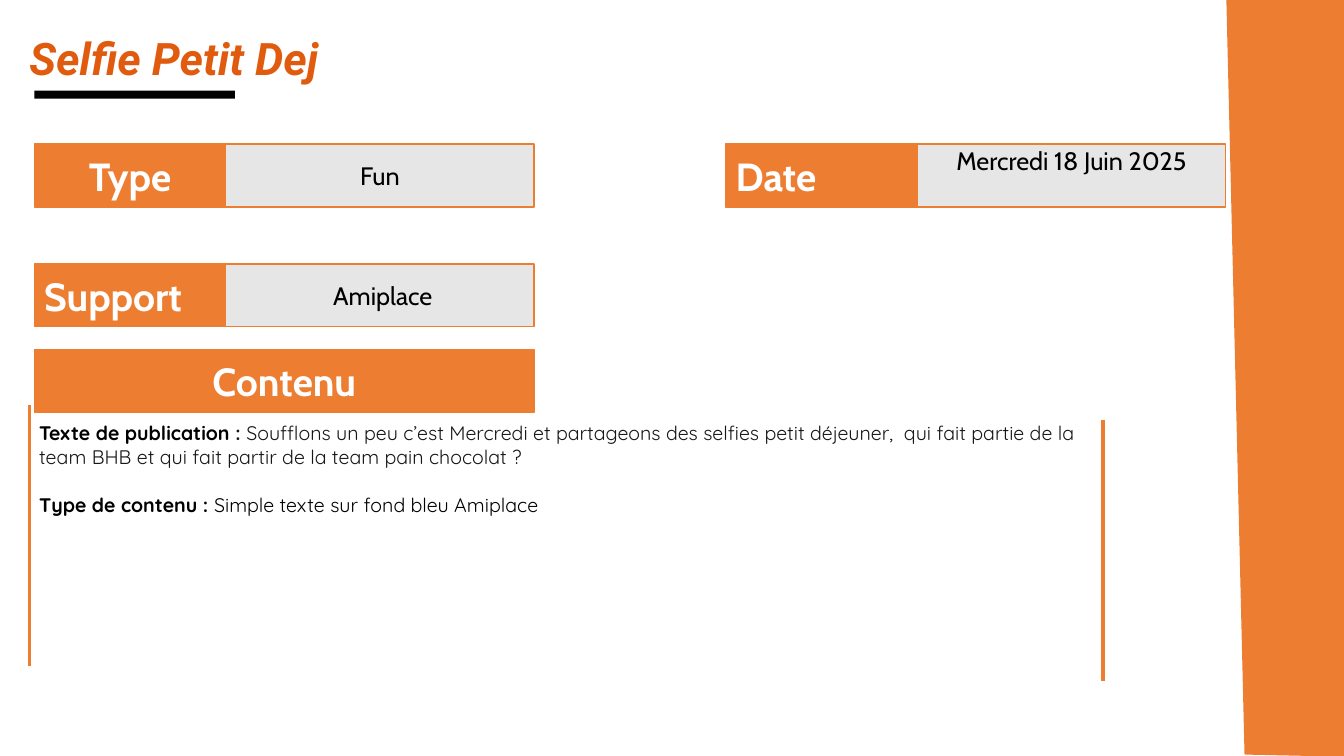
import pptx
import pptx.dml.color
import pptx.enum.shapes
import pptx.enum.text
import pptx.oxml.ns
import pptx.util
from lxml import etree

RGBColor = pptx.dml.color.RGBColor
ORANGE = RGBColor(0xED, 0x7D, 0x31)
TITLE_ORANGE = RGBColor(0xE1, 0x5B, 0x0F)
GREY = RGBColor(0xE7, 0xE6, 0xE6)
WHITE = RGBColor(0xFF, 0xFF, 0xFF)
INK = RGBColor(0x18, 0x17, 0x17)
BLACK = RGBColor(0, 0, 0)

ALIGN = pptx.enum.text.PP_ALIGN
ANCHOR = pptx.enum.text.MSO_ANCHOR
AUTO_SIZE = pptx.enum.text.MSO_AUTO_SIZE

LEFT, RIGHT_PAIR = 2.55, 54
LABEL_WIDTH, VALUE_WIDTH, BAR_HEIGHT = 14.25, 22.95, 8.3
TOP_ROW, SUPPORT_ROW, CONTENT_ROW = 19.07, 34.93, 46.27


class PostSheet:
    """Draw a post sheet, with every length a percentage of the slide's size."""

    label = {"name": "Cabin", "size": pptx.util.Pt(28), "bold": True}
    value = {"name": "Cabin", "size": pptx.util.Pt(18), "bold": False}
    body = {"name": "Quicksand", "size": pptx.util.Pt(14)}
    heading = {"name": "Roboto", "size": pptx.util.Pt(32), "bold": True, "italic": True}

    def __init__(self, deck):
        self.width, self.height = deck.slide_width, deck.slide_height
        self.slide = deck.slides.add_slide(deck.slide_layouts[5])
        self.shapes = self.slide.shapes

    def place(self, x, y):
        return round(self.width * x / 100), round(self.height * y / 100)

    def apply(self, target, formats):
        for attribute, setting in formats.items():
            setattr(target, attribute, setting)

    def add_words(self, paragraph, words, style, color):
        run = paragraph.add_run()
        run.text = words
        self.apply(run.font, style)
        run.font.color.rgb = color

    def paint(self, shape, fill, outline=None):
        shape.shadow.inherit = False
        shape.fill.solid()
        shape.fill.fore_color.rgb = fill
        if outline is None:
            shape.line.fill.background()
        else:
            shape.line.color.rgb = outline
            shape.line.width = pptx.util.Pt(1)

    def title(self, words, x, y, w, h):
        title = self.shapes.title
        left, top = self.place(x, y)
        width, height = self.place(w, h)
        self.apply(title, {"left": left, "top": top, "width": width, "height": height})
        self.apply(title.text_frame, {"vertical_anchor": ANCHOR.TOP, "auto_size": AUTO_SIZE.NONE})
        paragraph = title.text_frame.paragraphs[0]
        paragraph.alignment = ALIGN.JUSTIFY
        self.add_words(paragraph, words, self.heading, TITLE_ORANGE)

    def panel(self, start, *corners):
        outline = self.shapes.build_freeform(*self.place(*start), scale=1.0)
        outline.add_line_segments([self.place(*corner) for corner in corners], close=True)
        self.paint(outline.convert_to_shape(), ORANGE, ORANGE)

    def bar(self, x, y, w, h, fill, outline=None):
        bar = self.shapes.add_shape(
            pptx.enum.shapes.MSO_SHAPE.RECTANGLE, *self.place(x, y), *self.place(w, h))
        self.paint(bar, fill, outline)
        return bar

    def cell(self, words, x, y, w, fill, style, color, align=ALIGN.CENTER, **frame):
        text = self.bar(x, y, w, BAR_HEIGHT, fill, ORANGE).text_frame
        self.apply(text, {"word_wrap": True, "vertical_anchor": ANCHOR.MIDDLE, **frame})
        text.paragraphs[0].alignment = align
        self.add_words(text.paragraphs[0], words, style, color)

    def field(self, label, value, x, y, align=ALIGN.LEFT, **frame):
        self.cell(label, x, y, LABEL_WIDTH, ORANGE, self.label, WHITE, align)
        self.cell(value, x + LABEL_WIDTH, y, VALUE_WIDTH, GREY, self.value, BLACK, **frame)

    def rule(self, x, top, bottom):
        rule = self.shapes.add_connector(
            pptx.enum.shapes.MSO_CONNECTOR.STRAIGHT, *self.place(x, top), *self.place(x, bottom))
        rule.line.color.rgb = ORANGE
        rule.line.width = pptx.util.Pt(2.25)
        etree.SubElement(rule._element.spPr, pptx.oxml.ns.qn("a:effectLst"))

    def details(self, paragraphs, x, y, w, h):
        text = self.shapes.add_textbox(*self.place(x, y), *self.place(w, h)).text_frame
        self.apply(text, {"word_wrap": True, "auto_size": AUTO_SIZE.SHAPE_TO_FIT_TEXT})
        for index, runs in enumerate(paragraphs):
            paragraph = text.add_paragraph() if index else text.paragraphs[0]
            paragraph.space_before = pptx.util.Pt(17.5 if index else 0)
            for words, bold, color in runs:
                self.add_words(paragraph, words, {**self.body, "bold": bold}, color)


def main():
    deck = pptx.Presentation()
    deck.slide_width = pptx.util.Inches(13.33)
    deck.slide_height = pptx.util.Inches(7.5)
    sheet = PostSheet(deck)
    sheet.title("Selfie Petit Dej", 1.43, 3.33, 82.75, 6.93)
    sheet.panel((91.3, 0), (100, 0), (100, 100), (92.65, 99.73))
    sheet.bar(LEFT, 12, 14.93, 1.07, BLACK)
    sheet.field("Type", "Fun", LEFT, TOP_ROW, ALIGN.CENTER)
    sheet.field("Date", "Mercredi 18 Juin 2025", RIGHT_PAIR, TOP_ROW,
                vertical_anchor=ANCHOR.TOP, margin_top=pptx.util.Inches(0.01))
    sheet.field("Support", " Amiplace", LEFT, SUPPORT_ROW)
    sheet.rule(2.18, 53.6, 88.13)
    sheet.cell("Contenu", LEFT, CONTENT_ROW, LABEL_WIDTH + VALUE_WIDTH,
               ORANGE, sheet.label, WHITE)
    sheet.rule(82.07, 55.6, 90.13)
    sheet.details([
        [("Texte de publication ", True, BLACK), (": ", True, INK),
         ("Soufflons un peu c’est Mercredi et partageons des selfies petit déjeuner,  "
          "qui fait partie de la team BHB et qui fait partir de la team pain chocolat ?",
          False, INK)],
        [("Type de contenu : ", True, BLACK),
         ("Simple texte sur fond bleu Amiplace", False, BLACK)],
    ], 2.18, 55.07, 80.57, 13.87)
    deck.save("out.pptx")


if __name__ == "__main__":
    main()
